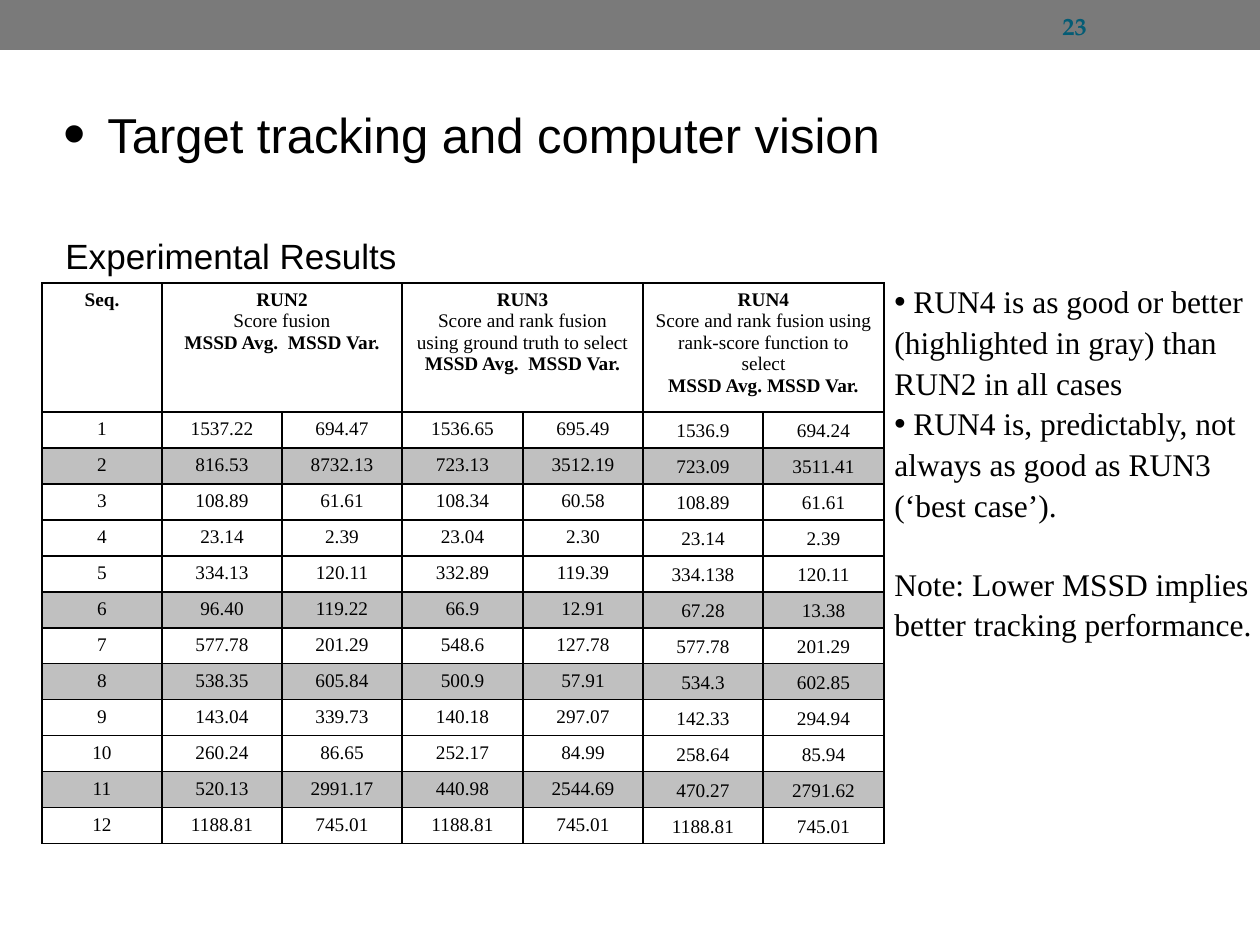
from dataclasses import dataclass

from lxml import etree
from pptx import Presentation
from pptx.dml.color import RGBColor
from pptx.enum.shapes import MSO_SHAPE
from pptx.enum.text import MSO_ANCHOR, PP_ALIGN
from pptx.oxml.ns import qn
from pptx.util import Emu, Pt

RECTANGLE = MSO_SHAPE.RECTANGLE
TOP, MIDDLE, BOTTOM = MSO_ANCHOR.TOP, MSO_ANCHOR.MIDDLE, MSO_ANCHOR.BOTTOM
LEFT, CENTER = PP_ALIGN.LEFT, PP_ALIGN.CENTER
EMU_PER_PX = 914400 / 126


@dataclass(frozen=True)
class Theme:
    """Colours, typefaces and type sizes of the slide."""
    ink: str = "000000"
    band: str = "7A7A7A"
    highlight: str = "C0C0C0"
    number: str = "045C75"
    sans: str = "Arial"
    serif: str = "Times New Roman"
    number_font: str = "TeX Gyre Pagella"
    title_size: int = 28
    heading_size: int = 20
    remark_size: int = 18
    number_size: int = 14
    table_size: int = 11


THEME = Theme()
HEADERS = [
    [("Seq.", True)],
    [("RUN2", True), ("Score fusion", False), ("MSSD Avg.  MSSD Var.", True)],
    [("RUN3", True), ("Score and rank fusion", False),
     ("using ground truth to select", False), ("MSSD Avg.  MSSD Var.", True)],
    [("RUN4", True),
     ("Score and rank fusion using rank-score function to select", False),
     ("MSSD Avg. MSSD Var.", True)],
]
RESULTS = [
    ("1537.22", "694.47", "1536.65", "695.49", "1536.9", "694.24"),
    ("816.53", "8732.13", "723.13", "3512.19", "723.09", "3511.41"),
    ("108.89", "61.61", "108.34", "60.58", "108.89", "61.61"),
    ("23.14", "2.39", "23.04", "2.30", "23.14", "2.39"),
    ("334.13", "120.11", "332.89", "119.39", "334.138", "120.11"),
    ("96.40", "119.22", "66.9", "12.91", "67.28", "13.38"),
    ("577.78", "201.29", "548.6", "127.78", "577.78", "201.29"),
    ("538.35", "605.84", "500.9", "57.91", "534.3", "602.85"),
    ("143.04", "339.73", "140.18", "297.07", "142.33", "294.94"),
    ("260.24", "86.65", "252.17", "84.99", "258.64", "85.94"),
    ("520.13", "2991.17", "440.98", "2544.69", "470.27", "2791.62"),
    ("1188.81", "745.01", "1188.81", "745.01", "1188.81", "745.01"),
]
HIGHLIGHTED = {2, 6, 8, 11}
REMARKS = [
    (" RUN4 is as good or better (highlighted in gray) than RUN2 in all cases", True),
    (" RUN4 is, predictably, not always as good as RUN3 (‘best case’).", True),
    ("Note: Lower MSSD implies better tracking performance.", False),
]


def px(length):
    """Turn slide pixels into EMU."""
    return Emu(round(length * EMU_PER_PX))


def add_span(para, text, font, size, color=THEME.ink, bold=False):
    """Add one formatted run to a paragraph."""
    span = para.add_run()
    span.text = text
    span.font.name = font
    span.font.size = Pt(size)
    span.font.bold = bold
    span.font.color.rgb = RGBColor.from_string(color)


def add_bullet(para, percent, margin=0, indent=0):
    """Give a paragraph a round bullet with a hanging indent."""
    properties = para._p.get_or_add_pPr()
    properties.set("marL", str(px(margin)))
    properties.set("indent", str(px(indent)))
    color = etree.SubElement(properties, qn("a:buClr"))
    etree.SubElement(color, qn("a:srgbClr"), val=THEME.ink)
    etree.SubElement(properties, qn("a:buSzPct"), val=str(percent * 1000))
    etree.SubElement(properties, qn("a:buFont"), typeface=THEME.sans)
    etree.SubElement(properties, qn("a:buChar"), char="•")


def add_box(page, left, top, width, height, anchor=TOP):
    """Add a wrapping text box and return its text frame."""
    box = page.shapes.add_textbox(px(left), px(top), px(width), px(height))
    frame = box.text_frame
    frame.word_wrap = True
    frame.vertical_anchor = anchor
    return frame


def add_band(page):
    """Add the band across the top of the page."""
    band = page.shapes.add_shape(RECTANGLE, 0, 0, px(1260), px(50))
    band.shadow.inherit = False
    band.fill.solid()
    band.fill.fore_color.rgb = RGBColor.from_string(THEME.band)
    band.line.fill.background()


def add_remarks(page):
    """Add the remarks beside the table."""
    frame = add_box(page, 882, 273, 388, 357)
    for index, (text, bulleted) in enumerate(REMARKS):
        para = frame.paragraphs[0] if index == 0 else frame.add_paragraph()
        para.alignment = LEFT
        para.line_spacing = 1.08
        if bulleted:
            add_bullet(para, 102)
        else:
            para.space_before = Pt(21.6)
        add_span(para, text, THEME.serif, THEME.remark_size)


def style_cell(cell, fill=None):
    """Set the borders and fill of a table cell."""
    properties = cell._tc.get_or_add_tcPr()
    for side in ("a:lnL", "a:lnR", "a:lnT", "a:lnB"):
        border = etree.SubElement(properties, qn(side), w=str(Pt(1)))
        solid = etree.SubElement(border, qn("a:solidFill"))
        etree.SubElement(solid, qn("a:srgbClr"), val=THEME.ink)
    if fill:
        cell.fill.solid()
        cell.fill.fore_color.rgb = RGBColor.from_string(fill)
    else:
        cell.fill.background()


def fill_cell(cell, lines, anchor=TOP):
    """Write centred lines of (text, bold) into a table cell."""
    cell.vertical_anchor = anchor
    frame = cell.text_frame
    for index, (text, bold) in enumerate(lines):
        para = frame.paragraphs[0] if index == 0 else frame.add_paragraph()
        para.alignment = CENTER
        add_span(para, text, THEME.serif, THEME.table_size, bold=bold)


def add_results(page):
    """Add the table of tracking results."""
    width, header_height, row_height = 842, 129, 36
    rows, columns = len(RESULTS) + 1, len(RESULTS[0]) + 1
    height = header_height + row_height * len(RESULTS)
    table = page.shapes.add_table(
        rows, columns, px(42), px(283), px(width), px(height)).table
    table.first_row = table.horz_banding = False
    for index, column in enumerate(table.columns):
        column.width = px(width * (index + 1) // columns - width * index // columns)
    for index, row in enumerate(table.rows):
        row.height = px(row_height if index else header_height)
        for cell in row.cells:
            style_cell(cell, THEME.highlight if index in HIGHLIGHTED else None)
    for index, lines in enumerate(HEADERS):
        first = max(0, 2 * index - 1)
        if index:
            table.cell(0, first).merge(table.cell(0, first + 1))
        fill_cell(table.cell(0, first), lines)
    for sequence, values in enumerate(RESULTS, 1):
        for index, text in enumerate((str(sequence), *values)):
            anchor = BOTTOM if index > 4 else TOP
            fill_cell(table.cell(sequence, index), [(text, False)], anchor)


def main():
    """Build the slide and save the deck."""
    deck = Presentation()
    deck.slide_width, deck.slide_height = px(1260), px(945)
    page = deck.slides.add_slide(deck.slide_layouts[6])
    add_band(page)
    heading = add_box(page, 53, 228, 700, 52).paragraphs[0]
    add_span(heading, "Experimental Results", THEME.sans, THEME.heading_size)
    add_results(page)
    add_remarks(page)
    number = add_box(page, 1050, 4, 147, 43, MIDDLE).paragraphs[0]
    add_span(number, "23", THEME.number_font, THEME.number_size, THEME.number, True)
    title = add_box(page, 32, 98, 1207, 75).paragraphs[0]
    add_bullet(title, 130, 63, -44)
    add_span(title, "Target tracking and computer vision", THEME.sans, THEME.title_size)
    deck.save("out.pptx")


if __name__ == "__main__":
    main()
